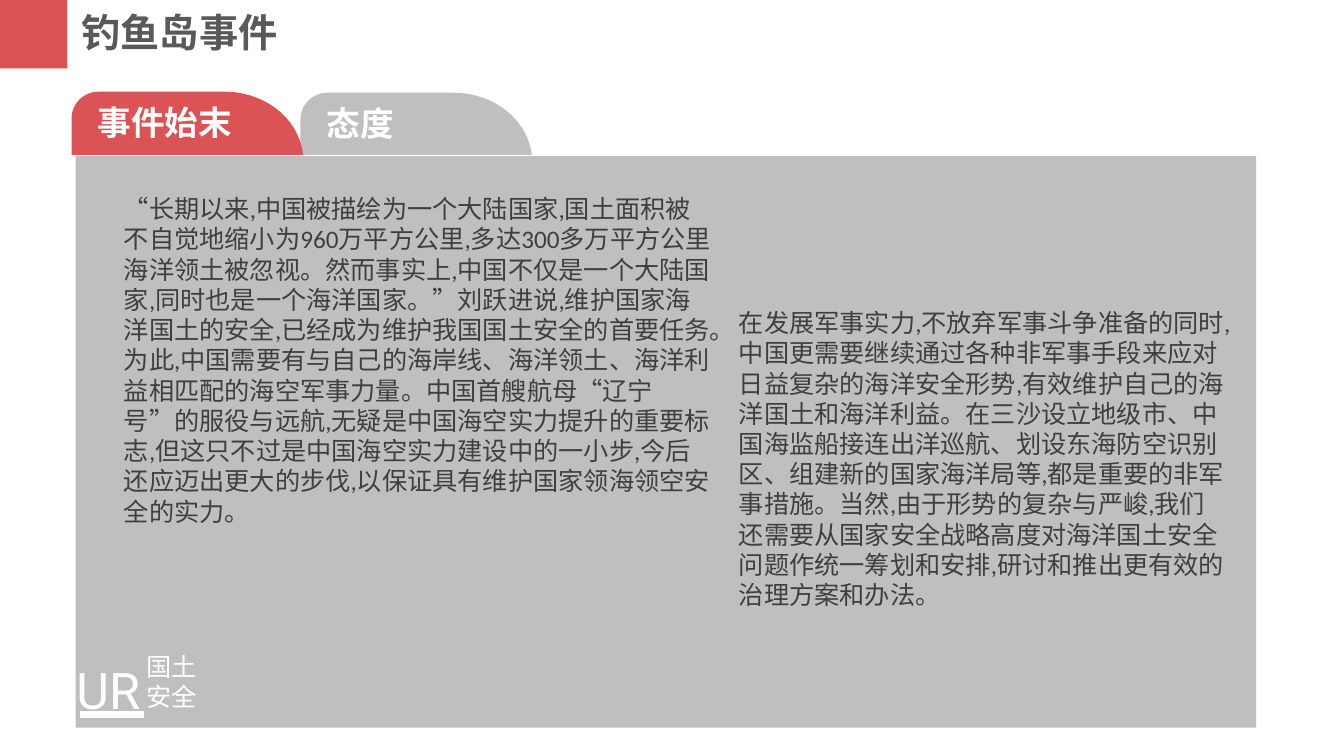
"""Build the slide on the Diaoyu Islands incident with two tabs and two text columns."""
import pptx
import pptx.util
import pptx.dml.color
import pptx.enum.shapes
import pptx.enum.text
import pptx.oxml.ns
import lxml.etree

Inches = pptx.util.Inches
SHAPE = pptx.enum.shapes.MSO_SHAPE
TEXT = pptx.enum.text

RED, GREY, WHITE = "DB5355", "BFBFBF", "FFFFFF"
CJK = "Noto Sans CJK SC"

TITLE = "钓鱼岛事件"
TITLE_FORMAT = {"size": 28, "name": CJK, "color": "595959", "bold": True}
TAB_FORMAT = {"size": 24, "name": CJK, "color": WHITE, "bold": True}
BODY_FORMAT = {"size": 18, "name": "Calibri", "color": "3D3F41", "bold": False}
MARK_FORMAT = {"size": 36, "name": "Roboto", "color": WHITE, "bold": False}
MOTTO_FORMAT = {**MARK_FORMAT, "size": 18}

TABS = [("态度", 2.98, 0.92, GREY), ("事件始末", 0.71, 0.91, RED)]

HISTORY = (
    "“长期以来,中国被描绘为一个大陆国家,国土面积被不自觉地缩小为960万平方公里,"
    "多达300多万平方公里海洋领土被忽视。然而事实上,中国不仅是一个大陆国家,"
    "同时也是一个海洋国家。”刘跃进说,维护国家海洋国土的安全,"
    "已经成为维护我国国土安全的首要任务。为此,中国需要有与自己的海岸线、海洋领土、"
    "海洋利益相匹配的海空军事力量。中国首艘航母“辽宁号”的服役与远航,"
    "无疑是中国海空实力提升的重要标志,但这只不过是中国海空实力建设中的一小步,"
    "今后还应迈出更大的步伐,以保证具有维护国家领海领空安全的实力。"
)
MEASURES = (
    "在发展军事实力,不放弃军事斗争准备的同时,中国更需要继续通过各种非军事手段来"
    "应对日益复杂的海洋安全形势,有效维护自己的海洋国土和海洋利益。在三沙设立地级市、"
    "中国海监船接连出洋巡航、划设东海防空识别区、组建新的国家海洋局等,"
    "都是重要的非军事措施。当然,由于形势的复杂与严峻,"
    "我们还需要从国家安全战略高度对海洋国土安全问题作统一筹划和安排,"
    "研讨和推出更有效的治理方案和办法。"
)
TEXTS = [
    (["UR"], (0.66, 6.49, 1.03, 0.71), MARK_FORMAT),
    (["国土", "安全"], (1.35, 6.41, 1.52, 0.71), MOTTO_FORMAT),
    ([HISTORY], (1.13, 1.87, 6.07, 3.43), BODY_FORMAT),
    ([MEASURES], (7.23, 3, 5.03, 3.13), BODY_FORMAT),
]


def rgb(value):
    return pptx.dml.color.RGBColor.from_string(value)


def write(box, lines, style):
    frame = box.text_frame
    settings = {
        "word_wrap": True,
        "auto_size": TEXT.MSO_AUTO_SIZE.SHAPE_TO_FIT_TEXT,
        "vertical_anchor": TEXT.MSO_ANCHOR.TOP,
    }
    for name, value in settings.items():
        setattr(frame, name, value)
    for index, line in enumerate(lines):
        para = frame.add_paragraph() if index else frame.paragraphs[0]
        para.alignment = TEXT.PP_ALIGN.LEFT
        span = para.add_run()
        span.text = line
        values = {
            "size": pptx.util.Pt(style["size"]),
            "name": style["name"],
            "bold": style["bold"],
        }
        for name, value in values.items():
            setattr(span.font, name, value)
        span.font.color.rgb = rgb(style["color"])
        latin = span.font._element.find(pptx.oxml.ns.qn("a:latin"))
        east_asian = lxml.etree.Element(pptx.oxml.ns.qn("a:ea"), typeface=CJK)
        latin.addnext(east_asian)


def add_text(page, lines, place, style):
    box = page.shapes.add_textbox(*map(Inches, place))
    write(box, lines, style)


def add_block(page, kind, place, color):
    block = page.shapes.add_shape(kind, *map(Inches, place))
    block.shadow.inherit = False
    block.fill.solid()
    block.fill.fore_color.rgb = rgb(color)
    block.line.fill.background()
    return block


def add_tab(page, label, left, top, color):
    body = add_block(page, SHAPE.ROUNDED_RECTANGLE, (left, top, 1.77, 0.86), color)
    body.adjustments[0] = 0.311
    add_block(page, SHAPE.ARC, (left + 0.74, top, 1.56, 1.38), color)
    add_text(page, [label], (left + 0.16, top + 0.05, 1.81, 0.51), TAB_FORMAT)


def add_title(page):
    title = page.shapes.title
    place = {"left": 0.71, "top": 0.03, "width": 3.32, "height": 0.57}
    for name, value in place.items():
        setattr(title, name, Inches(value))
    write(title, [TITLE], TITLE_FORMAT)
    title.text_frame.paragraphs[0].alignment = TEXT.PP_ALIGN.JUSTIFY


def add_underline(page):
    ends = map(Inches, (0.79, 7.09, 1.43, 7.09))
    line = page.shapes.add_connector(pptx.enum.shapes.MSO_CONNECTOR.STRAIGHT, *ends)
    line.line.color.rgb = rgb(WHITE)
    line.line.width = pptx.util.Pt(4.5)
    properties = line._element.spPr
    lxml.etree.SubElement(properties, pptx.oxml.ns.qn("a:effectLst"))


def main():
    deck = pptx.Presentation()
    deck.slide_width, deck.slide_height = Inches(13.33), Inches(7.5)
    page = deck.slides.add_slide(deck.slide_layouts[5])
    add_title(page)
    for tab in TABS:
        add_tab(page, *tab)
    add_block(page, SHAPE.RECTANGLE, (0, 0, 0.67, 0.68), RED)
    add_block(page, SHAPE.RECTANGLE, (0.24, 1.54, 12.66, 0.78), WHITE)
    add_block(page, SHAPE.RECTANGLE, (0.75, 1.55, 11.71, 5.67), GREY)
    for lines, place, style in TEXTS:
        add_text(page, lines, place, style)
    add_underline(page)
    deck.save("out.pptx")


if __name__ == "__main__":
    main()
